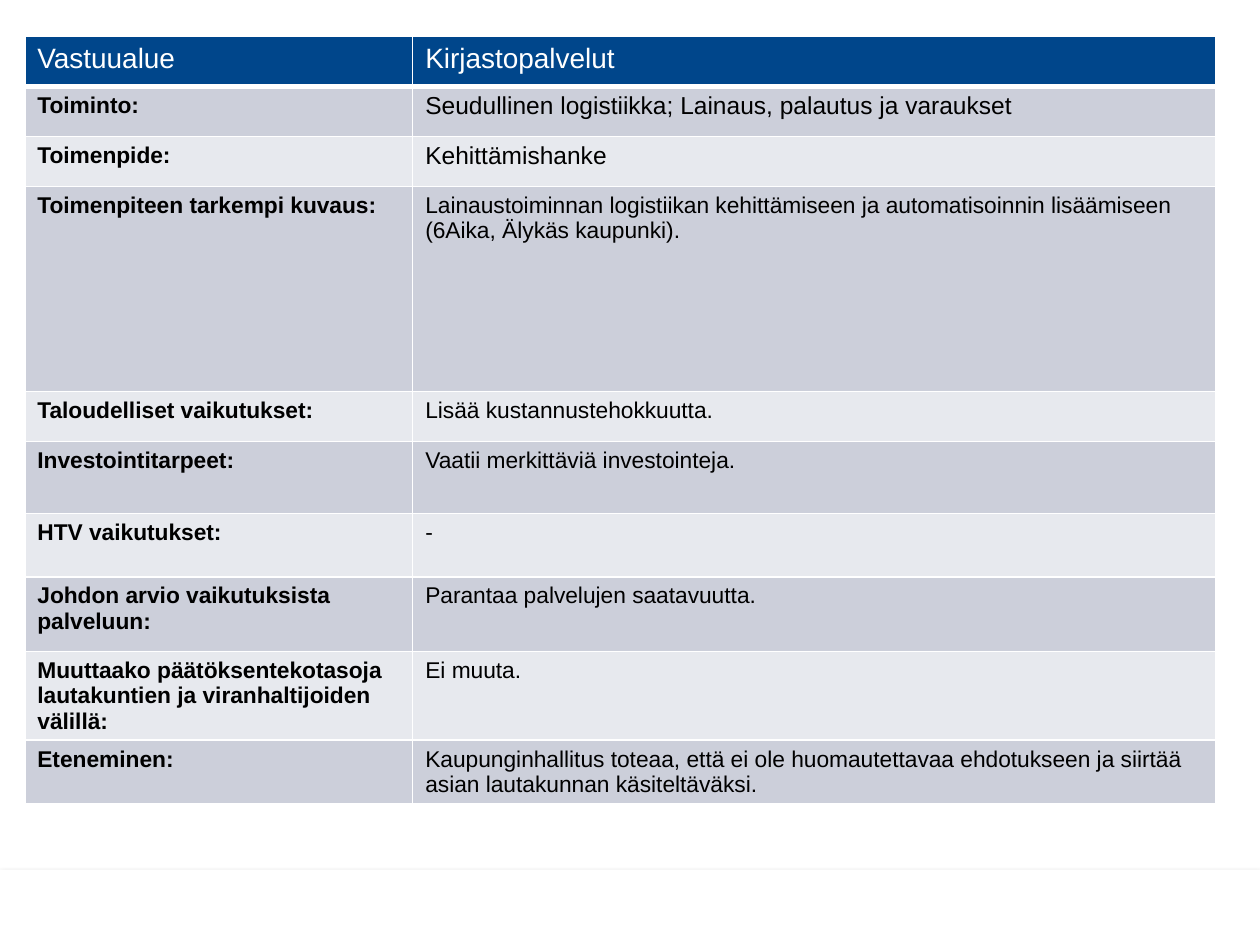
import pptx
import pptx.util
from lxml import etree
from pptx.dml.color import RGBColor
from pptx.enum.shapes import MSO_SHAPE
from pptx.oxml import parse_xml
from pptx.oxml.ns import nsdecls
from pptx.util import Cm, Pt

WHITE = RGBColor(0xFF, 0xFF, 0xFF)
BLACK = RGBColor(0x00, 0x00, 0x00)
HEADER_BLUE = RGBColor(0x00, 0x46, 0x8B)
BANDS = [RGBColor(0xE7, 0xE9, 0xEE), RGBColor(0xCC, 0xCF, 0xDA)]

SLIDE_WIDTH, SLIDE_HEIGHT = 25.4, 19.05
FOOTER_TOP = 17.53
TABLE_LEFT, TABLE_TOP = 0.5, 0.74
COLUMN_WIDTHS = [7.82, 16.18]
LABEL_SIZE = 13

# label, value, value size in points, row height in cm
ROWS = [
    ("Vastuualue", "Kirjastopalvelut", 16, 1.0),
    ("Toiminto:", "Seudullinen logistiikka; Lainaus, palautus ja varaukset", 14, 1.01),
    ("Toimenpide:", "Kehittämishanke", 14, 1.01),
    ("Toimenpiteen tarkempi kuvaus:",
     "Lainaustoiminnan logistiikan kehittämiseen ja automatisoinnin lisäämiseen "
     "(6Aika, Älykäs kaupunki).", 13, 4.13),
    ("Taloudelliset vaikutukset:", "Lisää kustannustehokkuutta.", 13, 1.01),
    ("Investointitarpeet:", "Vaatii merkittäviä investointeja.", 13, 1.45),
    ("HTV vaikutukset:", "-", 13, 1.28),
    ("Johdon arvio vaikutuksista palveluun:", "Parantaa palvelujen saatavuutta.", 13, 1.5),
    ("Muuttaako päätöksentekotasoja lautakuntien ja viranhaltijoiden välillä:",
     "Ei muuta.", 13, 1.79),
    ("Eteneminen:",
     "Kaupunginhallitus toteaa, että ei ole huomautettavaa ehdotukseen ja siirtää "
     "asian lautakunnan käsiteltäväksi.", 13, 1.26),
]


def add_footer_band(page):
    band = page.shapes.add_shape(MSO_SHAPE.RECTANGLE, 0, Cm(FOOTER_TOP), Cm(SLIDE_WIDTH),
                                 Cm(SLIDE_HEIGHT - FOOTER_TOP))
    band.fill.solid()
    band.fill.fore_color.rgb = WHITE
    band.line.fill.background()
    band.shadow.inherit = False
    effects = band.element.spPr.find(pptx.oxml.ns.qn("a:effectLst"))
    effects.append(parse_xml(
        f'<a:outerShdw {nsdecls("a")} blurRad="{Pt(3.1)}" dist="{Pt(1.8)}" dir="5400000" '
        'rotWithShape="0"><a:srgbClr val="000000"><a:alpha val="35000"/></a:srgbClr>'
        '</a:outerShdw>'))


def add_borders(cell, bottom_width):
    properties = cell._tc.get_or_add_tcPr()
    for side, width in zip("LRTB", (1, 1, 1, bottom_width)):
        properties.append(parse_xml(
            f'<a:ln{side} {nsdecls("a")} w="{Pt(width)}"><a:solidFill>'
            f'<a:srgbClr val="{WHITE}"/></a:solidFill></a:ln{side}>'))


def format_cell(cell, text, size, bold, color, fill):
    cell.text = text
    font = cell.text_frame.paragraphs[0].font
    font.name, font.size, font.bold = "Arial", Pt(size), bold
    font.color.rgb = color
    cell.fill.solid()
    cell.fill.fore_color.rgb = fill


def add_measure_table(page):
    height = sum(row[-1] for row in ROWS)
    table = page.shapes.add_table(len(ROWS), len(COLUMN_WIDTHS), Cm(TABLE_LEFT), Cm(TABLE_TOP),
                                  Cm(sum(COLUMN_WIDTHS)), Cm(height)).table
    for column, width in zip(table.columns, COLUMN_WIDTHS):
        column.width = Cm(width)
    for index, (label, value, value_size, row_height) in enumerate(ROWS):
        header = index == 0
        table.rows[index].height = Cm(row_height)
        color = WHITE if header else BLACK
        fill = HEADER_BLUE if header else BANDS[index % 2]
        label_size = value_size if header else LABEL_SIZE
        texts = [(label, label_size, not header), (value, value_size, False)]
        for column, (text, size, bold) in enumerate(texts):
            cell = table.cell(index, column)
            add_borders(cell, 3 if header else 1)
            format_cell(cell, text, size, bold, color, fill)


def main():
    deck = pptx.Presentation()
    deck.slide_width, deck.slide_height = Cm(SLIDE_WIDTH), Cm(SLIDE_HEIGHT)
    page = deck.slides.add_slide(deck.slide_layouts[6])
    add_footer_band(page)
    add_measure_table(page)
    deck.save("out.pptx")


if __name__ == "__main__":
    main()
